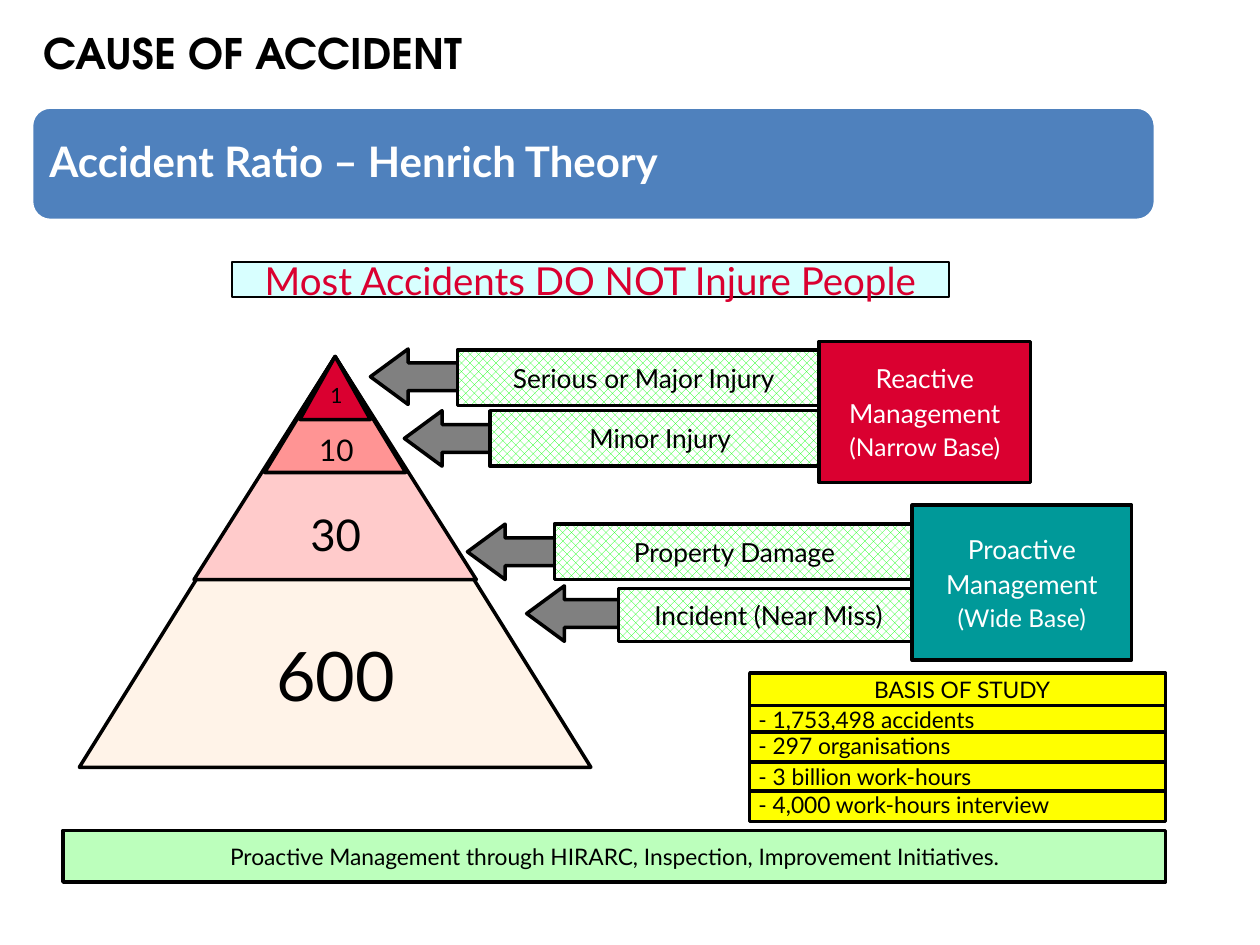
from typing import NamedTuple

from pptx import Presentation
from pptx.dml.color import RGBColor
from pptx.enum.dml import MSO_PATTERN
from pptx.enum.shapes import MSO_SHAPE
from pptx.enum.text import MSO_ANCHOR, PP_ALIGN
from pptx.util import Inches, Pt

BLACK = RGBColor(0, 0, 0)
WHITE = RGBColor(255, 255, 255)
RED = RGBColor(0xDA, 0x00, 0x30)
CORAL = RGBColor(0xFF, 0x94, 0x94)
PINK = RGBColor(0xFF, 0xCB, 0xCB)
CREAM = RGBColor(0xFF, 0xF3, 0xE8)
TEAL = RGBColor(0x00, 0x99, 0x99)
CYAN = RGBColor(0xD8, 0xFF, 0xFF)
YELLOW = RGBColor(0xFF, 0xFF, 0x00)
MINT = RGBColor(0xBC, 0xFF, 0xBC)
GREEN = RGBColor(0x00, 0xFF, 0x00)
GRAY = RGBColor(0x80, 0x80, 0x80)
BLUE = RGBColor(0x4F, 0x81, 0xBD)

APEX_X, APEX_Y = 2.66, 2.83


class Box(NamedTuple):
    left: float
    top: float
    width: float
    height: float


class Tier(NamedTuple):
    count: str
    width: float
    height: float
    fill: RGBColor
    size: int
    label: Box


class Cause(NamedTuple):
    text: str
    bar: Box
    arrow: Box


class Base(NamedTuple):
    name: str
    note: str
    box: Box
    fill: RGBColor
    causes: list[Cause]


TIERS = [
    Tier("600", 4.06, 3.26, CREAM, 39, Box(2.06, 5.03, 1.21, 0.67)),
    Tier("30", 2.24, 1.77, PINK, 25, Box(2.33, 4.03, 0.67, 0.43)),
    Tier("10", 1.12, 0.92, CORAL, 17, Box(2.43, 3.43, 0.48, 0.2)),
    Tier("1", 0.56, 0.5, RED, 12, Box(2.6, 3.04, 0.14, 0.14)),
]
BASES = [
    Base("Reactive", "(Narrow Base)", Box(6.5, 2.71, 1.68, 1.12), RED, [
        Cause("Serious or Major Injury", Box(3.63, 2.78, 2.96, 0.44),
              Box(2.94, 2.77, 1.2, 0.44)),
        Cause("Minor Injury", Box(3.89, 3.26, 2.7, 0.44),
              Box(3.21, 3.26, 1.2, 0.44)),
    ]),
    Base("Proactive", "(Wide Base)", Box(7.24, 4.01, 1.74, 1.23), TEAL, [
        Cause("Property Damage", Box(4.4, 4.16, 2.86, 0.44),
              Box(3.71, 4.16, 1.25, 0.44)),
        Cause("Incident (Near Miss)", Box(4.91, 4.67, 2.38, 0.42),
              Box(4.18, 4.65, 1.25, 0.44)),
    ]),
]
FACTS = [
    (5.6, "- 1,753,498 accidents"),
    (5.81, "- 297 organisations"),
    (6.05, "- 3 billion work-hours"),
    (6.28, "- 4,000 work-hours interview"),
]


def draw(slide, box: Box, fill: RGBColor, kind=MSO_SHAPE.RECTANGLE,
         line: RGBColor | None = BLACK, weight: float = 2):
    """Add a filled and outlined preset shape."""
    shape = slide.shapes.add_shape(kind, *map(Inches, box))
    shape.shadow.inherit = False
    shape.fill.solid()
    shape.fill.fore_color.rgb = fill
    if line is None:
        shape.line.fill.background()
    else:
        shape.line.color.rgb = line
        shape.line.width = Pt(weight)
    return shape


def write(shape, text: str, *, size: float, color: RGBColor = BLACK,
          font: str = "Lato", bold: bool = False, align=PP_ALIGN.CENTER,
          anchor=MSO_ANCHOR.MIDDLE, inset: tuple = (0, 0, 0, 0),
          after: float = 0, last: float | None = None) -> None:
    """Write one paragraph per line; last sets the final line's size."""
    frame = shape.text_frame
    frame.word_wrap = True
    frame.vertical_anchor = anchor
    (frame.margin_left, frame.margin_top,
     frame.margin_right, frame.margin_bottom) = map(Inches, inset)
    frame.text = text
    for par in frame.paragraphs:
        par.alignment = align
        par.space_after = Pt(after)
        par.font.name = font
        par.font.size = Pt(size)
        par.font.bold = bold
        par.font.color.rgb = color
    if last:
        frame.paragraphs[-1].font.size = Pt(last)


def stack(slide, tiers: list[Tier]) -> None:
    """Nest triangles that share an apex, then label them."""
    for tier in tiers:
        box = Box(APEX_X - tier.width / 2, APEX_Y, tier.width, tier.height)
        draw(slide, box, tier.fill, MSO_SHAPE.ISOSCELES_TRIANGLE)
    for tier in tiers:
        label = draw(slide, tier.label, tier.fill, line=None)
        write(label, tier.count, size=tier.size, anchor=MSO_ANCHOR.TOP)


def manage(slide, base: Base) -> None:
    """Draw a management box with its causes and arrows."""
    for cause in base.causes:
        arrow = draw(slide, cause.arrow, GRAY, MSO_SHAPE.LEFT_ARROW)
        arrow.adjustments[1] = 0.68
    for cause in base.causes:
        bar = draw(slide, cause.bar, WHITE)
        bar.fill.patterned()
        bar.fill.pattern = MSO_PATTERN.PERCENT_50
        bar.fill.fore_color.rgb = GREEN
        bar.fill.back_color.rgb = WHITE
        write(bar, cause.text, size=15, after=2)
    write(draw(slide, base.box, base.fill),
          f"{base.name}\nManagement\n{base.note}",
          size=15, color=WHITE, after=2, last=14)


def main() -> None:
    deck = Presentation()
    deck.slide_width, deck.slide_height = Inches(10), Inches(7.5)
    slide = deck.slides.add_slide(deck.slide_layouts[6])

    # Headline and ratio pyramid
    head = draw(slide, Box(1.84, 2.08, 5.69, 0.28), CYAN, weight=1)
    write(head, "Most Accidents DO NOT Injure People", size=22, color=RED)
    stack(slide, TIERS)

    # Basis of study
    write(draw(slide, Box(5.95, 5.34, 3.3, 0.26), YELLOW),
          "BASIS OF STUDY", size=13, inset=(0.07, 0, 0, 0))
    for top, fact in FACTS:
        write(draw(slide, Box(5.95, top, 3.3, 0.24), YELLOW), fact, size=13,
              align=PP_ALIGN.LEFT, anchor=MSO_ANCHOR.TOP,
              inset=(0.07, 0, 0, 0))

    # Conclusion
    write(draw(slide, Box(0.5, 6.59, 8.75, 0.41), MINT),
          "Proactive Management through HIRARC, Inspection, "
          "Improvement Initiatives.", size=13)

    # Causes and management
    for base in BASES:
        manage(slide, base)

    # Title and banner
    title = slide.shapes.add_textbox(*map(Inches, Box(0.25, 0, 8, 0.83)))
    write(title, "CAUSE OF ACCIDENT", size=24, font="TeX Gyre Adventor",
          bold=True, align=PP_ALIGN.LEFT, inset=(0.1, 0.05, 0.1, 0.05))
    banner = draw(slide, Box(0.25, 0.85, 8.92, 0.9), BLUE,
                  MSO_SHAPE.ROUNDED_RECTANGLE, WHITE)
    write(banner, "Accident Ratio – Henrich Theory", size=24, color=WHITE,
          bold=True, align=PP_ALIGN.LEFT, inset=(0.1, 0.05, 0.1, 0.1))

    deck.save("out.pptx")


if __name__ == "__main__":
    main()
